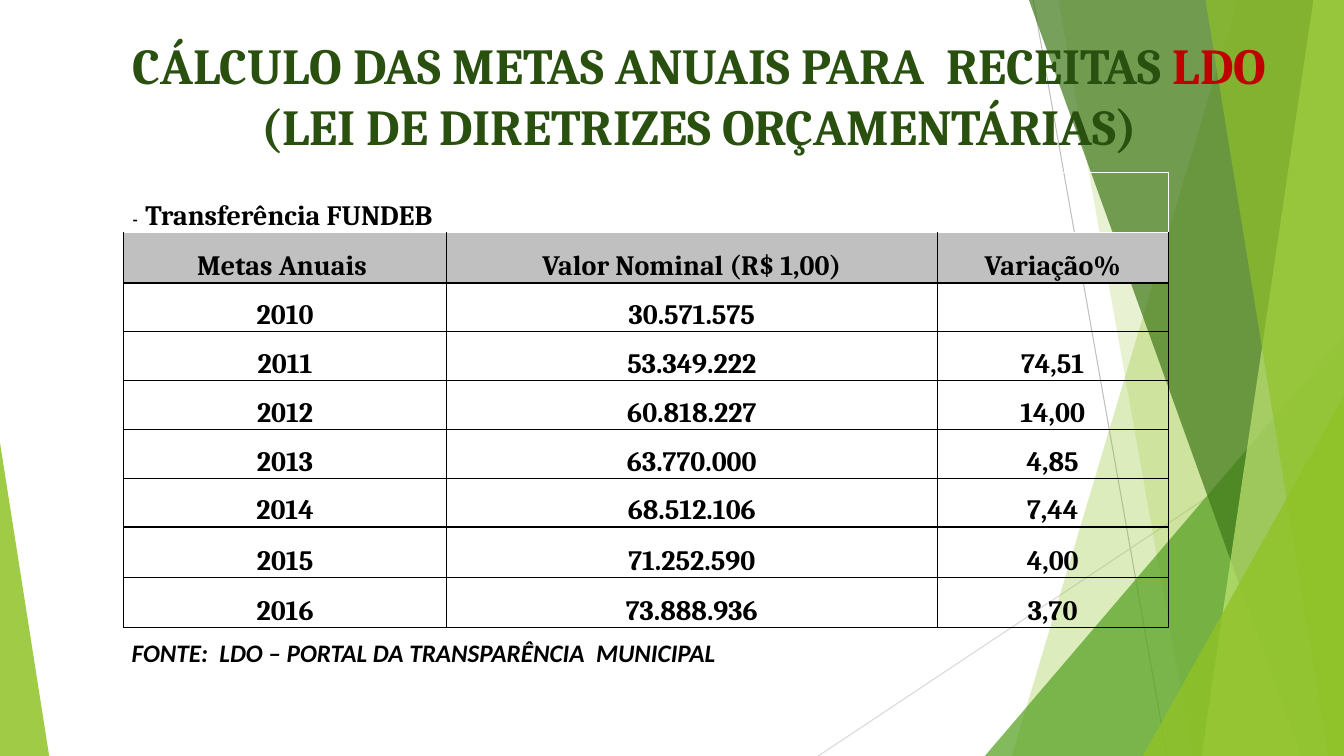
from lxml.etree import SubElement
from pptx import Presentation
from pptx.dml.color import RGBColor
from pptx.enum.shapes import MSO_CONNECTOR, MSO_SHAPE
from pptx.enum.text import MSO_ANCHOR, PP_ALIGN
from pptx.oxml.ns import qn
from pptx.util import Cm, Pt

BLACK = RGBColor(0x00, 0x00, 0x00)
WHITE = RGBColor(0xFF, 0xFF, 0xFF)
RED = RGBColor(0xC0, 0x00, 0x00)
TITLE_GREEN = RGBColor(0x2A, 0x50, 0x10)
LIME = RGBColor(0x90, 0xC2, 0x26)
LEAF = RGBColor(0x54, 0xA0, 0x21)
FOREST = RGBColor(0x3F, 0x78, 0x19)
PALE = RGBColor(0xC0, 0xE4, 0x74)
HEADER_GREY = RGBColor(0xC0, 0xC0, 0xC0)
LINE_GREY = RGBColor(0xBF, 0xBF, 0xBF)
LINE_PALE = RGBColor(0xD9, 0xD9, 0xD9)

WIDTH, HEIGHT = 33.87, 19.05

TITLE = [
    ("CÁLCULO DAS METAS ANUAIS PARA  RECEITAS ", TITLE_GREEN),
    ("LDO", RED),
    (" (LEI DE DIRETRIZES ORÇAMENTÁRIAS)", TITLE_GREEN),
]
CAPTION = [(" -  ", 12), ("Transferência FUNDEB", 20)]
GOALS = [
    ("Metas Anuais ", "Valor Nominal (R$ 1,00)", "Variação%"),
    ("2010", "30.571.575", ""),
    ("2011", "53.349.222", "74,51"),
    ("2012", "60.818.227", "14,00"),
    ("2013", "63.770.000", "4,85"),
    ("2014", "68.512.106", "7,44"),
    ("2015", "71.252.590", "4,00"),
    ("2016", "73.888.936", "3,70"),
]
SOURCE = "FONTE:  LDO – PORTAL DA TRANSPARÊNCIA  MUNICIPAL"

COLUMN_WIDTHS = [8.13, 12.37, 5.82]
ROW_HEIGHTS = [1.52, 1.27] + [1.23] * 5 + [1.27] * 2

# Start x, start y, end x, end y, colour
THIN_LINES = [
    (26.04, 0, 29.41, HEIGHT, LINE_GREY),
    (WIDTH, 10.24, 20.62, HEIGHT, LINE_PALE),
]
# Bands reach the right edge: top x, bottom x, colour, opacity in percent
# Triangles: left, top, width, apex position, colour, opacity in percent
DECORATION = [
    ("band", 31.19, 25.5, LIME, 30),
    ("band", 26.67, 30.05, LIME, 20),
    ("triangle", 24.82, 8.46, 9.05, 1, LEAF, 72),
    ("band", 25.93, 32.79, FOREST, 70),
    ("band", 33.1, 30.28, PALE, 70),
    ("band", 30.38, 33.48, LIME, 65),
    ("triangle", 28.8, 9.98, 5.07, 1, LIME, 80),
    ("triangle", 0, 11.15, 1.24, 0, LIME, 85),
]


def add_span(para, text, size, color=BLACK, font="Cambria", italic=False):
    span = para.add_run()
    span.text = text
    span.font.name = font
    span.font.size = Pt(size)
    span.font.bold = True
    span.font.italic = italic
    span.font.color.rgb = color


def add_thin_line(page, x1, y1, x2, y2, color):
    line = page.shapes.add_connector(
        MSO_CONNECTOR.STRAIGHT, Cm(x1), Cm(y1), Cm(x2), Cm(y2))
    line.line.color.rgb = color
    line.line.width = Pt(0.75)
    SubElement(line.element.spPr, qn("a:effectLst"))


def build_band(page, top_x, bottom_x):
    corners = [(WIDTH, 0), (WIDTH, HEIGHT), (bottom_x, HEIGHT)]
    outline = page.shapes.build_freeform(Cm(top_x), 0)
    outline.add_line_segments([(Cm(x), Cm(y)) for x, y in corners], close=True)
    return outline.convert_to_shape()


def build_triangle(page, left, top, width, apex):
    triangle = page.shapes.add_shape(
        MSO_SHAPE.ISOSCELES_TRIANGLE, Cm(left), Cm(top), Cm(width), Cm(HEIGHT - top))
    triangle.adjustments[0] = apex
    return triangle


def paint(shape, color, opacity):
    """Give a translucent fill without outline or shadow."""
    shape.shadow.inherit = False
    shape.line.fill.background()
    shape.fill.solid()
    shape.fill.fore_color.rgb = color
    color_node = shape.element.spPr.find(qn("a:solidFill"))[0]
    SubElement(color_node, qn("a:alpha"), val=str(opacity * 1000))


def set_borders(cell, color, top_color):
    properties = cell._tc.get_or_add_tcPr()
    for side in "LRTB":
        border = SubElement(properties, qn(f"a:ln{side}"), w=str(Pt(1)))
        fill = SubElement(border, qn("a:solidFill"))
        shade = top_color if side == "T" else color
        SubElement(fill, qn("a:srgbClr"), val=str(shade))


def add_goals_table(page):
    frame = page.shapes.add_table(
        len(ROW_HEIGHTS), len(COLUMN_WIDTHS), Cm(3.12), Cm(4.34),
        Cm(sum(COLUMN_WIDTHS)), Cm(sum(ROW_HEIGHTS)))
    table = frame.table
    table.first_row = table.horz_banding = False
    for column, width in zip(table.columns, COLUMN_WIDTHS):
        column.width = Cm(width)
    for r, height in enumerate(ROW_HEIGHTS):
        table.rows[r].height = Cm(height)
        for c in range(len(COLUMN_WIDTHS)):
            cell = table.cell(r, c)
            cell.vertical_anchor = MSO_ANCHOR.BOTTOM
            cell.margin_left = cell.margin_right = Cm(0.13)
            cell.margin_top = cell.margin_bottom = 0
            set_borders(cell, BLACK if r else WHITE, BLACK if r > 1 else WHITE)
            if r == 1:
                cell.fill.solid()
                cell.fill.fore_color.rgb = HEADER_GREY
            else:
                cell.fill.background()
            if r and GOALS[r - 1][c]:
                para = cell.text_frame.paragraphs[0]
                para.alignment = PP_ALIGN.CENTER
                add_span(para, GOALS[r - 1][c], 20)
    caption = table.cell(0, 0)
    caption.merge(table.cell(0, len(COLUMN_WIDTHS) - 1))
    for text, size in CAPTION:
        add_span(caption.text_frame.paragraphs[0], text, size)


def place_title(page):
    title = page.shapes.title
    title.element.getparent().append(title.element)
    title.left, title.top = Cm(2.92), Cm(0.74)
    title.width, title.height = Cm(29.41), Cm(3.66)
    title.text_frame.vertical_anchor = MSO_ANCHOR.TOP
    para = title.text_frame.paragraphs[0]
    para.alignment = PP_ALIGN.CENTER
    for text, color in TITLE:
        add_span(para, text, 36, color)


def main():
    deck = Presentation()
    deck.slide_width, deck.slide_height = Cm(WIDTH), Cm(HEIGHT)
    page = deck.slides.add_slide(deck.slide_layouts[5])
    for line in THIN_LINES:
        add_thin_line(page, *line)
    builders = {"band": build_band, "triangle": build_triangle}
    for kind, *geometry, color, opacity in DECORATION:
        paint(builders[kind](page, *geometry), color, opacity)
    place_title(page)
    add_goals_table(page)
    box = page.shapes.add_textbox(Cm(3.07), Cm(15.93), Cm(16.94), Cm(1.8))
    box.text_frame.word_wrap = True
    add_span(box.text_frame.paragraphs[0], SOURCE, 18, font="Calibri", italic=True)
    deck.save("out.pptx")


if __name__ == "__main__":
    main()
